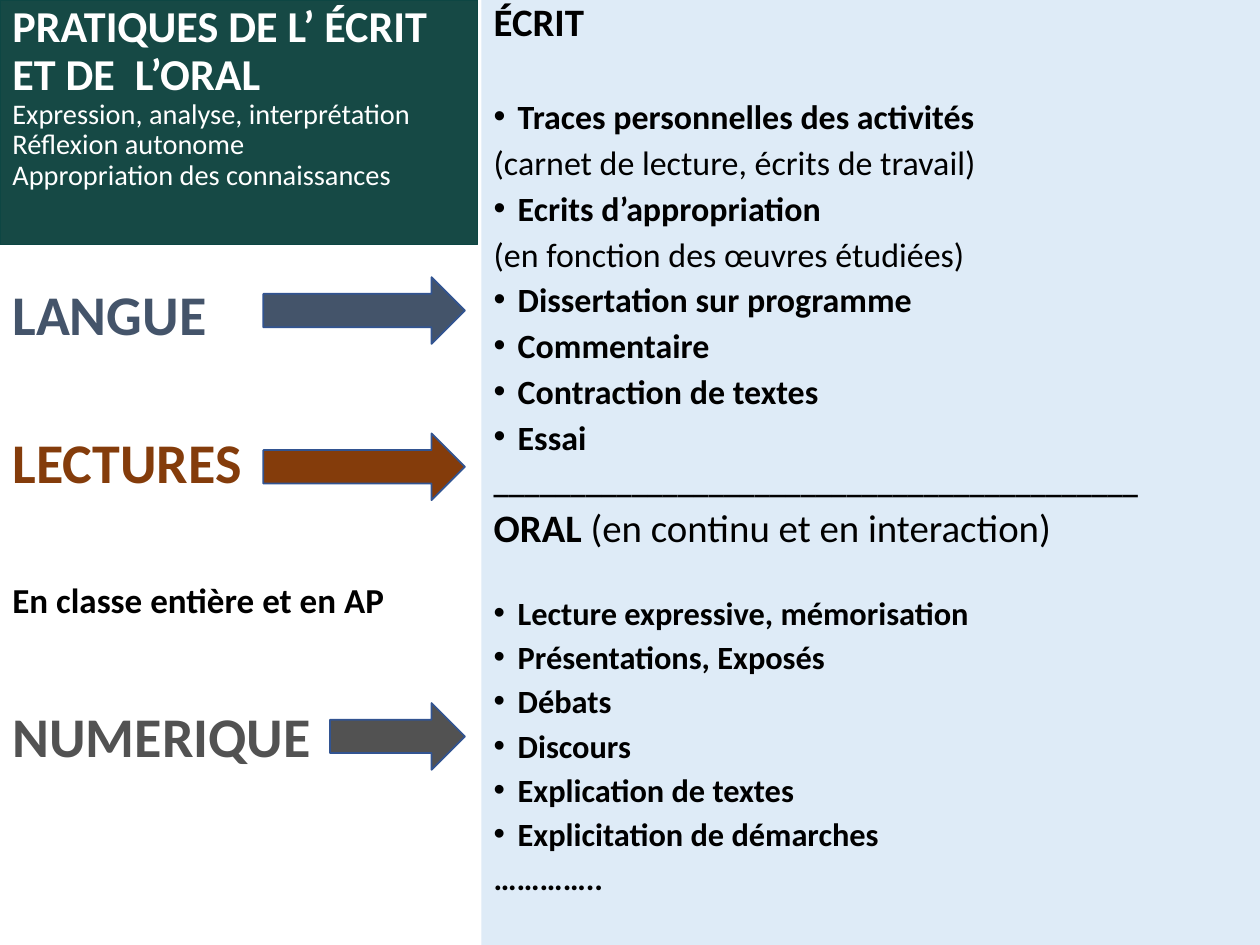
from dataclasses import dataclass

import pptx
import pptx.dml.color
import pptx.enum.shapes
import pptx.enum.text
import pptx.oxml.ns
import pptx.util
from lxml import etree

Inches = pptx.util.Inches
Pt = pptx.util.Pt
ANCHOR = pptx.enum.text.MSO_ANCHOR
SHAPE = pptx.enum.shapes.MSO_SHAPE

WHITE, BLACK = "FFFFFF", "000000"
SLATE, RUST, GREY = "44546A", "843C0B", "525252"
BULLET_INDENT = 0.19
PARAGRAPH_GAP = 7.5


@dataclass(frozen=True)
class Box:
    left: float
    top: float
    width: float
    height: float


@dataclass(frozen=True)
class Line:
    text: str
    size: float
    bold: bool = True
    color: str = BLACK
    before: float = PARAGRAPH_GAP
    bullet: bool = False
    plain_tail: str = ""


@dataclass(frozen=True)
class Arrow:
    box: Box
    color: str


def rgb(value: str) -> pptx.dml.color.RGBColor:
    return pptx.dml.color.RGBColor.from_string(value)


def add_shape(slide, kind, box: Box, fill: str, outline: str = "", weight: float = 1):
    shape = slide.shapes.add_shape(
        kind, Inches(box.left), Inches(box.top), Inches(box.width), Inches(box.height)
    )
    shape.shadow.inherit = False
    shape.fill.solid()
    shape.fill.fore_color.rgb = rgb(fill)
    if outline:
        shape.line.color.rgb = rgb(outline)
        shape.line.width = Pt(weight)
    else:
        shape.line.fill.background()
    return shape


def add_run(paragraph, text: str, line: Line, bold: bool) -> None:
    run = paragraph.add_run()
    run.text = text
    for name, value in {"name": "Calibri", "size": Pt(line.size), "bold": bold}.items():
        setattr(run.font, name, value)
    run.font.color.rgb = rgb(line.color)


def add_bullet(paragraph) -> None:
    properties = paragraph._p.get_or_add_pPr()
    properties.set("marL", str(Inches(BULLET_INDENT)))
    properties.set("indent", str(-Inches(BULLET_INDENT)))
    font = etree.SubElement(properties, pptx.oxml.ns.qn("a:buFont"))
    font.set("typeface", "Arial")
    mark = etree.SubElement(properties, pptx.oxml.ns.qn("a:buChar"))
    mark.set("char", "•")


def write_lines(shape, lines: list[Line], spacing: float, anchor=ANCHOR.TOP,
                top: float = 0.05, bottom: float = 0.05) -> None:
    frame = shape.text_frame
    frame_format = {
        "word_wrap": True,
        "vertical_anchor": anchor,
        "margin_left": Inches(0.1),
        "margin_right": Inches(0.1),
        "margin_top": Inches(top),
        "margin_bottom": Inches(bottom),
    }
    for name, value in frame_format.items():
        setattr(frame, name, value)
    for index, line in enumerate(lines):
        paragraph = frame.add_paragraph() if index else frame.paragraphs[0]
        paragraph_format = {
            "alignment": pptx.enum.text.PP_ALIGN.LEFT,
            "line_spacing": spacing,
            "space_before": Pt(line.before),
        }
        for name, value in paragraph_format.items():
            setattr(paragraph, name, value)
        if line.bullet:
            add_bullet(paragraph)
        add_run(paragraph, line.text, line, line.bold)
        if line.plain_tail:
            add_run(paragraph, line.plain_tail, line, False)


def bullets(texts: list[str], size: float, first_gap: float = PARAGRAPH_GAP) -> list[Line]:
    return [
        Line(text, size, bullet=True, before=PARAGRAPH_GAP if index else first_gap)
        for index, text in enumerate(texts)
    ]


HEADING = [
    Line(text, 25.2, color=WHITE, before=0)
    for text in ("PRATIQUES DE L’ ÉCRIT", "ET DE  L’ORAL")
] + [
    Line(text, 16.2, bold=False, color=WHITE, before=0)
    for text in (
        "Expression, analyse, interprétation",
        "Réflexion autonome",
        "Appropriation des connaissances",
    )
]

WRITTEN = [
    Line("ÉCRIT", 22.2),
    *bullets(["Traces personnelles des activités"], 19.4, first_gap=34.5),
    Line("(carnet de lecture, écrits de travail)", 19.4, bold=False),
    *bullets(["Ecrits d’appropriation"], 19.4),
    Line("(en fonction des œuvres étudiées)", 19.4, bold=False),
    *bullets(
        ["Dissertation sur programme", "Commentaire", "Contraction de textes", "Essai"], 19.4
    ),
    Line("_" * 42, 17.6),
]

SPOKEN = [
    Line("ORAL ", 22.2, plain_tail="(en continu et en interaction)"),
    *bullets(
        [
            "Lecture expressive, mémorisation",
            "Présentations, Exposés",
            "Débats",
            "Discours",
            "Explication de textes",
            "Explicitation de démarches",
        ],
        18.5,
        first_gap=29,
    ),
    Line("…………..", 18.5),
]

THEME_GAP = 50
THEMES = [
    Line("LANGUE", 32, color=SLATE),
    Line("LECTURES", 32, color=RUST, before=THEME_GAP),
    Line("En classe entière et en AP", 20, before=THEME_GAP),
    Line("NUMERIQUE", 32, color=GREY, before=THEME_GAP),
]

ARROWS = [
    Arrow(Box(2.09, 2.2, 1.6, 0.53), SLATE),
    Arrow(Box(2.09, 3.44, 1.6, 0.53), RUST),
    Arrow(Box(2.62, 5.58, 1.07, 0.53), GREY),
]


def main() -> None:
    deck = pptx.Presentation()
    deck.slide_width, deck.slide_height = Inches(10), Inches(7.5)
    slide = deck.slides.add_slide(deck.slide_layouts[6])

    # Heading panel
    heading = add_shape(slide, SHAPE.RECTANGLE, Box(0, 0, 3.79, 1.94), "164945", "0D4643", 0.75)
    write_lines(heading, HEADING, 0.9, ANCHOR.BOTTOM, bottom=0.42)

    # Written and spoken activities
    activities = add_shape(slide, SHAPE.RECTANGLE, Box(3.82, 0, 6.18, 7.5), "DEEBF7")
    write_lines(activities, WRITTEN + SPOKEN, 0.8)

    # Themes and the arrows that lead to the activities
    themes = slide.shapes.add_textbox(Inches(0), Inches(1.94), Inches(3.82), Inches(5.56))
    write_lines(themes, THEMES, 0.9, top=0.34)
    for arrow in ARROWS:
        add_shape(slide, SHAPE.RIGHT_ARROW, arrow.box, arrow.color, "325491")

    deck.save("out.pptx")


if __name__ == "__main__":
    main()
